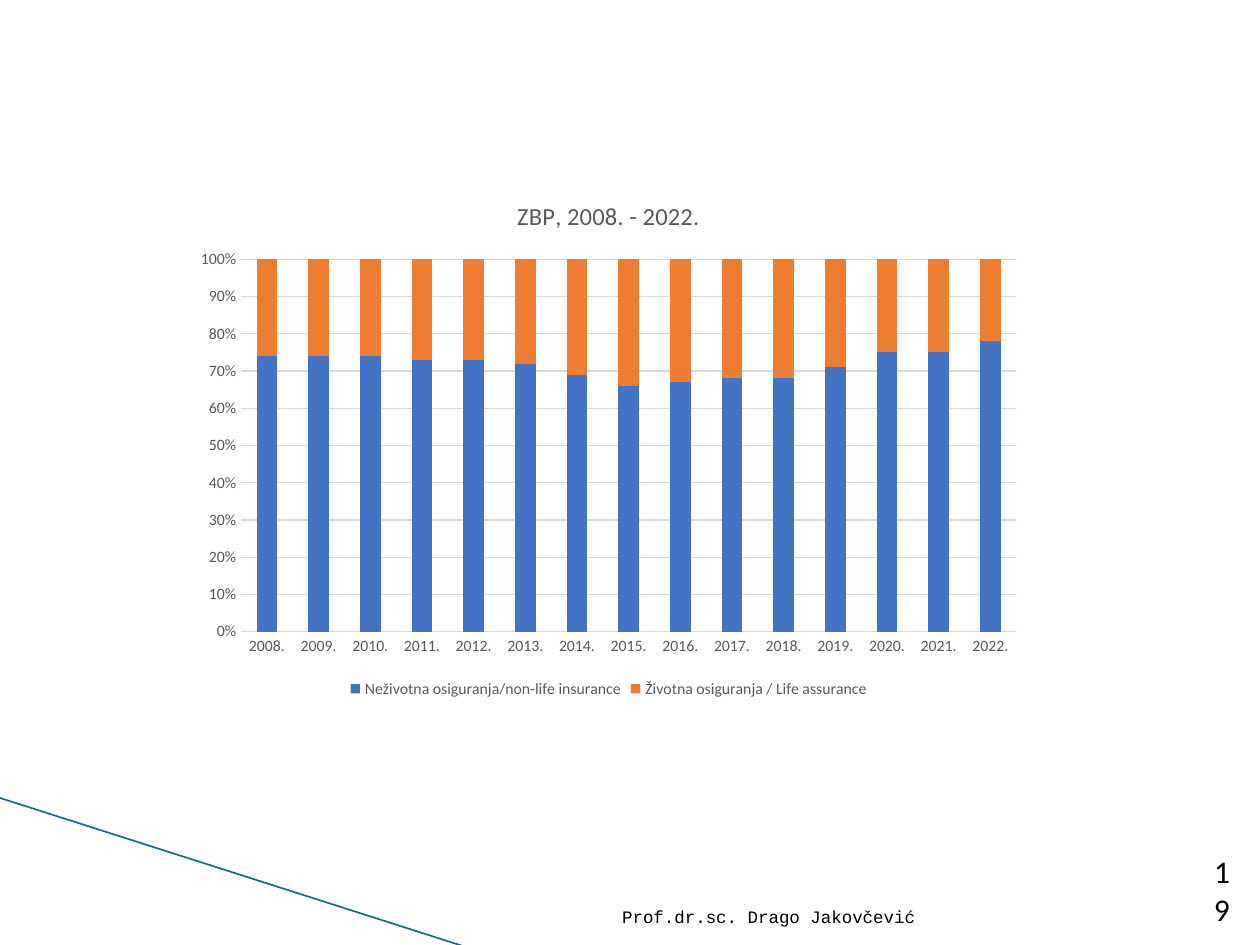
"""Build the slide with the 2008–2022 split of non-life and life insurance premiums."""
from dataclasses import dataclass

from lxml.etree import SubElement
from pptx import Presentation
from pptx.chart.data import CategoryChartData
from pptx.dml.color import RGBColor
from pptx.enum.chart import XL_CHART_TYPE, XL_LEGEND_POSITION, XL_TICK_MARK
from pptx.enum.shapes import MSO_CONNECTOR
from pptx.enum.text import MSO_ANCHOR, PP_ALIGN
from pptx.oxml.ns import qn
from pptx.util import Inches, Pt

BLACK = RGBColor(0x00, 0x00, 0x00)
GREY = RGBColor(0x59, 0x59, 0x59)
LIGHT_GREY = RGBColor(0xD9, 0xD9, 0xD9)
TEAL = RGBColor(0x15, 0x6D, 0x83)
BLUE = RGBColor(0x44, 0x72, 0xC4)
ORANGE = RGBColor(0xED, 0x7D, 0x31)


@dataclass
class Premium:
    name: str
    shares: list[int]
    color: RGBColor


@dataclass
class FooterItem:
    text: str
    left: float
    width: float
    font_name: str
    size: int


NON_LIFE_SHARES = [74, 74, 74, 73, 73, 72, 69, 66, 67, 68, 68, 71, 75, 75, 78]
PREMIUMS = [
    Premium("Neživotna osiguranja/non-life insurance", NON_LIFE_SHARES, BLUE),
    Premium("Životna osiguranja / Life assurance",
            [100 - share for share in NON_LIFE_SHARES], ORANGE),
]
FOOTER = [
    FooterItem("Prof.dr.sc. Drago Jakovčević", 4.79, 2.57, "Courier New", 10),
    FooterItem("19", 9.46, 0.4, "Calibri", 18),
]


def set_font(font, size: float, color: RGBColor, name: str = "Calibri") -> None:
    for attribute, value in {"name": name, "size": Pt(size), "bold": False}.items():
        setattr(font, attribute, value)
    font.color.rgb = color


def set_line(line, color: RGBColor, width: float) -> None:
    line.color.rgb = color
    line.width = Pt(width)


def add_corner_line(slide) -> None:
    corner = slide.shapes.add_connector(
        MSO_CONNECTOR.STRAIGHT, Inches(-0.01), Inches(6.33), Inches(3.71), Inches(7.52))
    set_line(corner.line, TEAL, 0.95)
    SubElement(corner._element.spPr, qn("a:effectLst"))


def add_premium_chart(slide) -> None:
    shares = CategoryChartData()
    shares.categories = [f"{year}." for year in range(2008, 2023)]
    for premium in PREMIUMS:
        shares.add_series(premium.name, premium.shares)
    chart = slide.shapes.add_chart(
        XL_CHART_TYPE.COLUMN_STACKED_100, Inches(1.46), Inches(1.41),
        Inches(6.74), Inches(4.17), shares).chart
    set_font(chart.font, 10, BLACK)

    chart.has_title = True
    title = chart.chart_title
    title.include_in_layout = False
    title.text_frame.text = "ZBP, 2008. - 2022."
    set_font(title.text_frame.paragraphs[0].runs[0].font, 14, GREY)

    chart.has_legend = True
    chart.legend.position = XL_LEGEND_POSITION.BOTTOM
    chart.legend.include_in_layout = False
    set_font(chart.legend.font, 9, GREY)

    years, percent = chart.category_axis, chart.value_axis
    for axis in (years, percent):
        axis.major_tick_mark = axis.minor_tick_mark = XL_TICK_MARK.NONE
        set_font(axis.tick_labels.font, 9, GREY)
    set_line(years.format.line, LIGHT_GREY, 0.75)
    percent.format.line.fill.background()
    percent.tick_labels.number_format = "0%"
    percent.tick_labels.number_format_is_linked = False
    set_line(percent.major_gridlines.format.line, LIGHT_GREY, 0.75)

    plot = chart.plots[0]
    for attribute, value in {"gap_width": 150, "overlap": 100,
                             "vary_by_categories": False}.items():
        setattr(plot, attribute, value)
    for series, premium in zip(plot.series, PREMIUMS):
        series.format.fill.solid()
        series.format.fill.fore_color.rgb = premium.color


def add_footer_item(slide, item: FooterItem) -> None:
    frame = slide.shapes.add_textbox(
        Inches(item.left), Inches(7.01), Inches(item.width), Inches(0.4)).text_frame
    frame.word_wrap = True
    frame.vertical_anchor = MSO_ANCHOR.BOTTOM
    paragraph = frame.paragraphs[0]
    paragraph.alignment = PP_ALIGN.RIGHT
    run = paragraph.add_run()
    run.text = item.text
    set_font(run.font, item.size, BLACK, item.font_name)


def main() -> None:
    presentation = Presentation()
    presentation.slide_width, presentation.slide_height = Inches(10), Inches(7.5)
    slide = presentation.slides.add_slide(presentation.slide_layouts[6])
    add_corner_line(slide)
    add_premium_chart(slide)
    for item in FOOTER:
        add_footer_item(slide, item)
    presentation.save("out.pptx")


if __name__ == "__main__":
    main()
